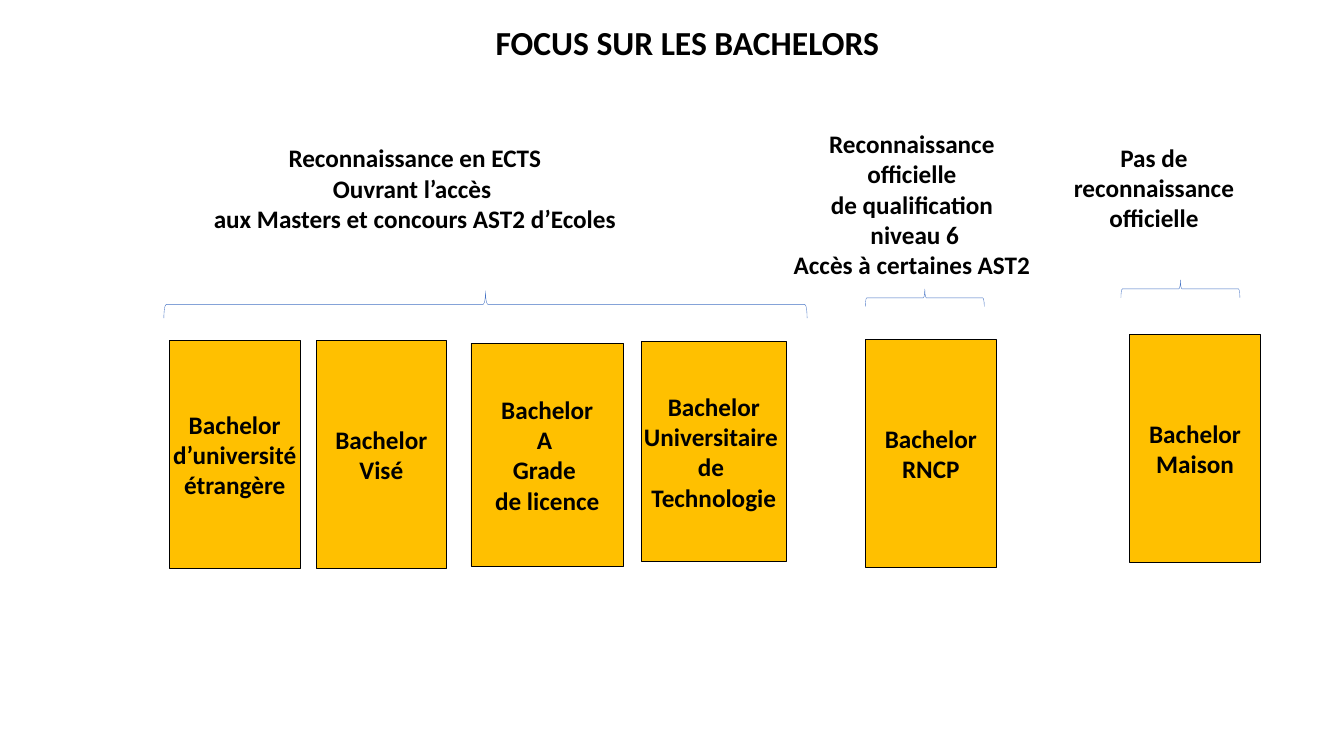
from pptx import Presentation
from pptx.dml.color import RGBColor
from pptx.enum.shapes import MSO_SHAPE as SHAPE
from pptx.enum.text import MSO_ANCHOR as ANCHOR, MSO_AUTO_SIZE as AUTO, PP_ALIGN as ALIGN
from pptx.util import Pt

# Content: lengths in points
TITLE = ("FOCUS SUR LES BACHELORS", (700.5, 27.4, 568, 65.5))

# Boxes: lines of text, (left, top, width, height)
BACHELORS = [
    (["Bachelor", "d’université", "étrangère"], (242, 486.7, 186.5, 325.4)),
    (["Bachelor", "Visé"], (451.4, 486.7, 186.5, 325.4)),
    (["Bachelor", "A ", "Grade ", "de licence"], (672.5, 490.3, 218.2, 318.2)),
    (["Bachelor", "Universitaire ", "de ", "Technologie"], (915.8, 488.2, 207.4, 313.9)),
    (["Bachelor", "RNCP"], (1236.2, 484.6, 186.5, 325.4)),
    (["Bachelor", "Maison"], (1613.5, 477.4, 186.5, 325.4)),
]

# Groups: heading lines, heading box, brace (centre x, centre y, span, depth)
GROUPS = [
    (["Reconnaissance en ECTS", "Ouvrant l’accès ", "aux Masters et concours AST2 d’Ecoles"],
     (295.2, 200.2, 594.7, 138.2), (693.4, 434.9, 918.7, 38.9)),
    (["Reconnaissance", " officielle ", "de qualification", " niveau 6", "Accès à certaines AST2"],
     (1124.6, 180, 355.7, 225.4), (1320.8, 425.5, 170, 25.2)),
    (["Pas de", "reconnaissance", " officielle "],
     (1525, 199.4, 246.2, 138.2), (1685.9, 412.6, 170, 25.2)),
]

THEME = {
    "font": "Calibri",
    "title": 48,
    "body": 36,
    "text": RGBColor(0, 0, 0),
    "box": RGBColor(0xFF, 0xC0, 0x00),
    "outline": RGBColor(0, 0, 0),
    "brace": RGBColor(0x44, 0x72, 0xC4),
}


def write(sp, lines, size=THEME["body"], align=ALIGN.CENTER, anchor=ANCHOR.TOP, fit=AUTO.NONE):
    tf = sp.text_frame
    tf.word_wrap = False
    tf.auto_size = fit
    tf.vertical_anchor = anchor
    for i, line in enumerate(lines):
        p = tf.add_paragraph() if i else tf.paragraphs[0]
        p.alignment = align
        r = p.add_run()
        r.text = line
        r.font.name = THEME["font"]
        r.font.size = Pt(size)
        r.font.bold = True
        r.font.color.rgb = THEME["text"]


def add_shape(kind, box, line, width, fill=None):
    sp = slide.shapes.add_shape(kind, *map(Pt, box))
    sp.shadow.inherit = False
    if fill is None:
        sp.fill.background()
    else:
        sp.fill.solid()
        sp.fill.fore_color.rgb = fill
    sp.line.color.rgb = line
    sp.line.width = Pt(width)
    return sp


prs = Presentation()
prs.slide_width, prs.slide_height = Pt(1919.5), Pt(1080)
slide = prs.slides.add_slide(prs.slide_layouts[5])

# Title
text, box = TITLE
title = slide.shapes.title
title.left, title.top, title.width, title.height = map(Pt, box)
write(title, [text], size=THEME["title"], align=ALIGN.LEFT)

# Bachelor boxes
for lines, box in BACHELORS:
    sp = add_shape(SHAPE.RECTANGLE, box, THEME["outline"], 0.75, fill=THEME["box"])
    write(sp, lines, anchor=ANCHOR.MIDDLE)

# Headings, each over a right brace turned to point up
for lines, box, (cx, cy, span, depth) in GROUPS:
    upright = (cx - depth / 2, cy - span / 2, depth, span)
    brace = add_shape(SHAPE.RIGHT_BRACE, upright, THEME["brace"], 0.5)
    brace.rotation = 270
    heading = slide.shapes.add_textbox(*map(Pt, box))
    write(heading, lines, fit=AUTO.SHAPE_TO_FIT_TEXT)

prs.save("out.pptx")
